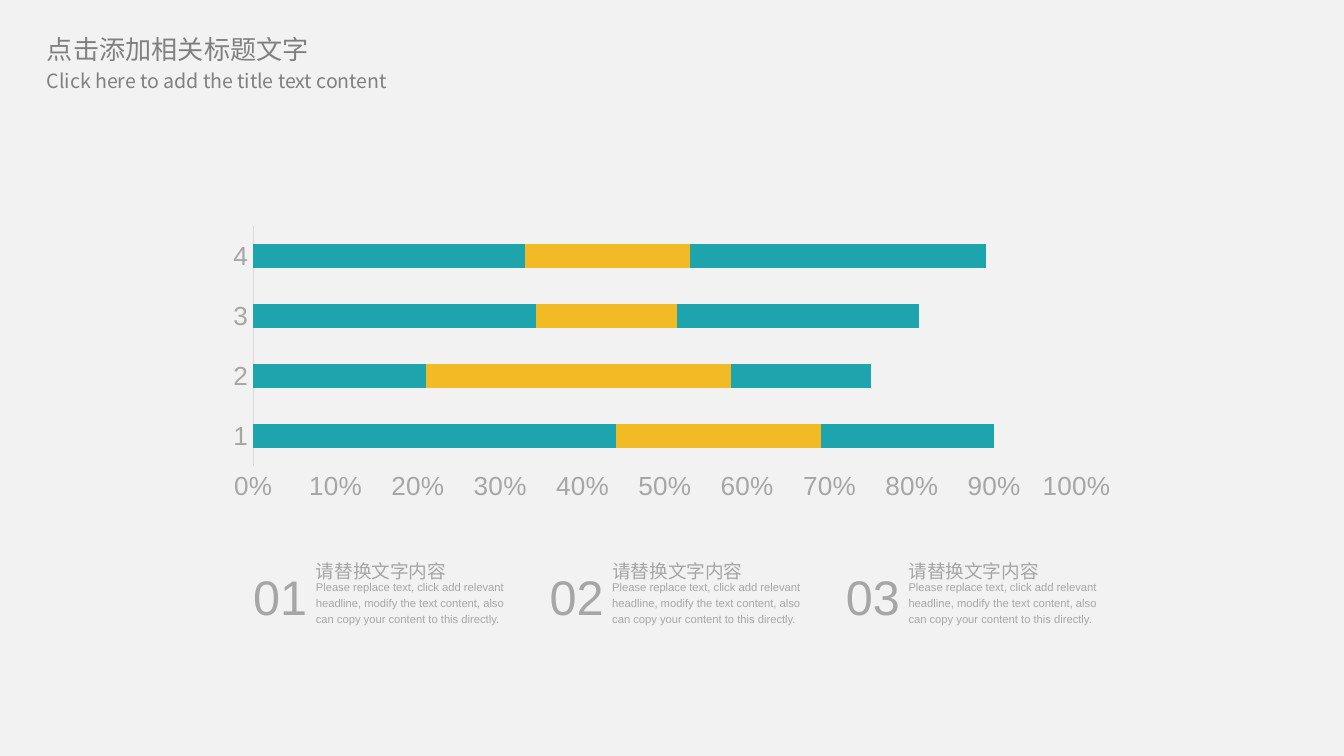
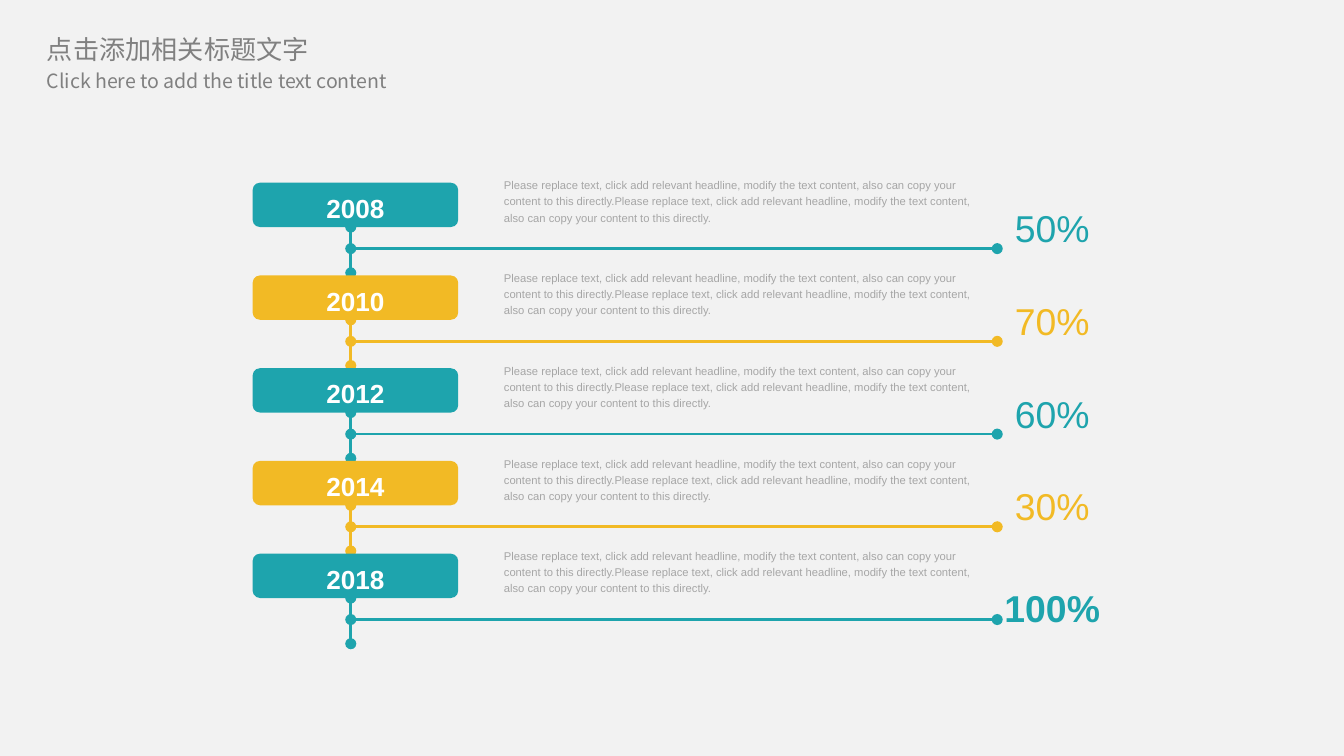
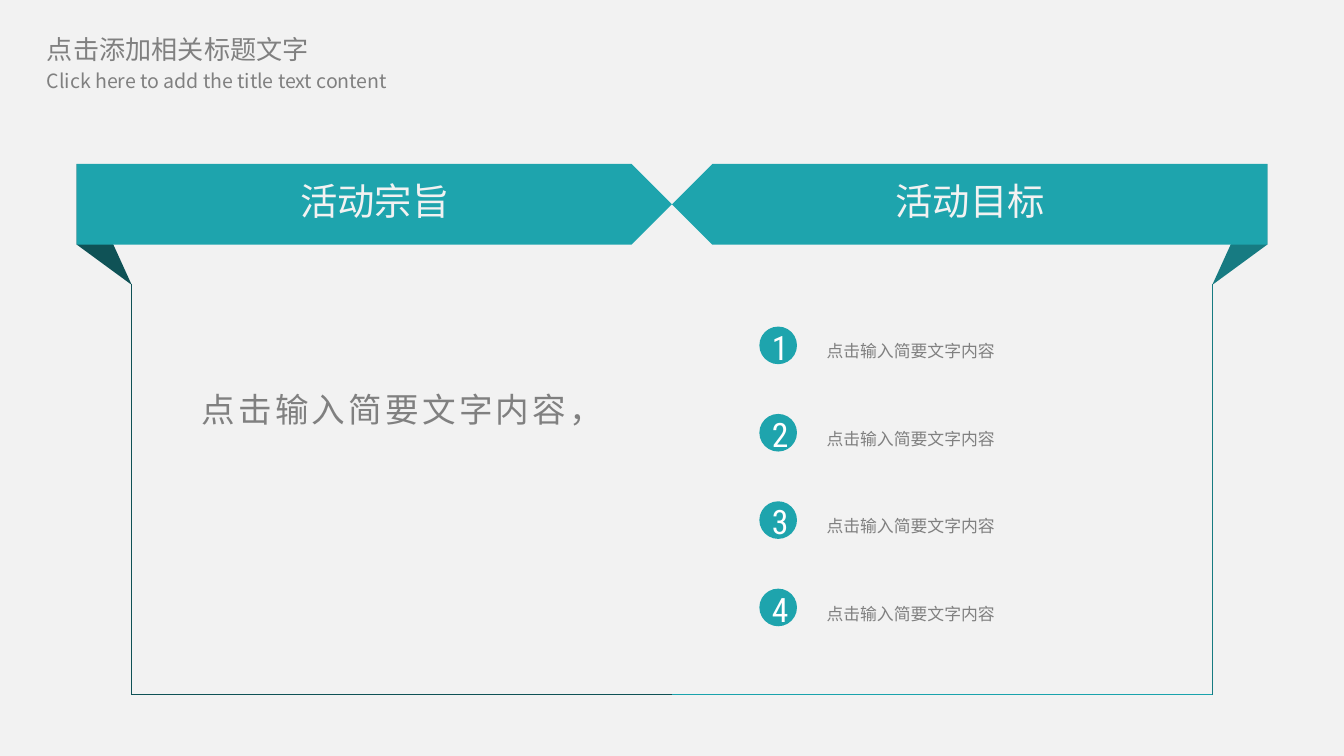
import dataclasses

import lxml.etree
import pptx
import pptx.chart.data
import pptx.dml.color
import pptx.enum.chart
import pptx.enum.shapes
import pptx.enum.text
import pptx.oxml.ns
import pptx.util

Inches = pptx.util.Inches
Pt = pptx.util.Pt
ALIGN = pptx.enum.text.PP_ALIGN
ANCHOR = pptx.enum.text.MSO_ANCHOR
SHAPE = pptx.enum.shapes.MSO_SHAPE


@dataclasses.dataclass(frozen=True)
class Theme:
    """Colours, fonts and type sizes shared by all slides."""

    background: str = "F2F2F2"
    teal: str = "1EA4AD"
    teal_rule: str = "1AA3AD"
    teal_dark: str = "177B82"
    teal_deep: str = "0F5256"
    yellow: str = "F2BA25"
    white: str = "FFFFFF"
    title_grey: str = "808080"
    body_grey: str = "A6A6A6"
    axis_grey: str = "D9D9D9"
    latin: str = "Arial"
    chinese: str = "Noto Sans CJK SC"
    numeral: str = "Roboto Condensed"
    tiny: float = 6
    small: float = 9
    caption: float = 10
    subtitle: float = 10.5
    title: float = 14
    statement: float = 18
    heading: float = 20
    index: float = 26


@dataclasses.dataclass(frozen=True)
class Box:
    """A region in inches."""

    left: float
    top: float
    width: float
    height: float

    def inner(self, left, top, width, height):
        """Return a box placed relative to this one."""
        return Box(self.left + left, self.top + top, width, height)

    def lengths(self):
        """Return left, top, width and height as lengths."""
        return [Inches(value) for value in dataclasses.astuple(self)]


THEME = Theme()
SENTENCE = ("Please replace text, click add relevant headline, modify the text content, "
            "also can copy your content to this directly.")
MILESTONES = [("2008", "50%"), ("2010", "70%"), ("2012", "60%"), ("2014", "30%"), ("2018", "100%")]


def rgb(colour):
    """Turn a hex string into a colour."""
    return pptx.dml.color.RGBColor.from_string(colour)


def write(frame, text, size, colour, font=THEME.latin, bold=False, align=ALIGN.LEFT,
          anchor=ANCHOR.TOP, spacing=None, before=0, inset=(0, 0), wrap=True):
    """Fill a text frame with one formatted paragraph."""
    frame.word_wrap = wrap
    frame.vertical_anchor = anchor
    frame.margin_left = frame.margin_right = Inches(inset[0])
    frame.margin_top = frame.margin_bottom = Inches(inset[1])
    paragraph = frame.paragraphs[0]
    paragraph.alignment = align
    paragraph.space_before = Pt(before)
    if spacing:
        paragraph.line_spacing = spacing
    run = paragraph.add_run()
    run.text = text
    run.font.size = Pt(size)
    run.font.bold = bold
    run.font.name = font
    run.font.color.rgb = rgb(colour)
    east_asian = lxml.etree.Element(pptx.oxml.ns.qn("a:ea"), typeface=THEME.chinese)
    run.font._element.find(pptx.oxml.ns.qn("a:latin")).addnext(east_asian)


def add_text(slide, box, text, **options):
    """Add a text box."""
    write(slide.shapes.add_textbox(*box.lengths()).text_frame, text, **options)


def paint(shape, colour):
    """Give a shape a flat fill without line or shadow."""
    shape.shadow.inherit = False
    shape.fill.solid()
    shape.fill.fore_color.rgb = rgb(colour)
    shape.line.fill.background()
    return shape


def add_shape(slide, kind, box, colour):
    """Add a flat preset shape."""
    return paint(slide.shapes.add_shape(kind, *box.lengths()), colour)


def add_line(slide, start, end, colour, width=0.75, dots=False):
    """Add a straight line, with round ends if wanted."""
    line = slide.shapes.add_connector(pptx.enum.shapes.MSO_CONNECTOR.STRAIGHT,
                                      *[Inches(value) for value in (*start, *end)])
    line.line.color.rgb = rgb(colour)
    line.line.width = Pt(width)
    properties = line._element.spPr
    if dots:
        outline = properties.find(pptx.oxml.ns.qn("a:ln"))
        for name in ("a:headEnd", "a:tailEnd"):
            lxml.etree.SubElement(outline, pptx.oxml.ns.qn(name), type="oval")
    lxml.etree.SubElement(properties, pptx.oxml.ns.qn("a:effectLst"))


def add_titled_slide(presentation):
    """Add a blank slide with the shared title and subtitle."""
    slide = presentation.slides.add_slide(presentation.slide_layouts[6])
    style = dict(font=THEME.chinese, colour=THEME.title_grey)
    add_text(slide, Box(0.28, 0.48, 2.83, 0.25), "Click here to add the title text content",
             size=THEME.subtitle, inset=(0.07, 0.03), **style)
    add_text(slide, Box(0.28, 0.21, 2.36, 0.31), "点击添加相关标题文字",
             size=THEME.title, inset=(0.07, 0.04), **style)
    return slide


def add_bar_chart(slide, box):
    """Add the stacked percentage bars."""
    data = pptx.chart.data.CategoryChartData()
    data.categories = ["1", "2", "3", "4"]
    rows = [(44, 21, 34, 33), (25, 37, 17, 20), (21, 17, 29, 36), (10, 25, 19, 11)]
    for number, values in enumerate(rows, 1):
        data.add_series(f"Series {number}", values)
    chart = slide.shapes.add_chart(pptx.enum.chart.XL_CHART_TYPE.BAR_STACKED_100,
                                   *box.lengths(), data).chart
    chart.has_legend = chart.has_title = False
    chart.font.name = THEME.latin
    chart.font.size = Pt(THEME.title)
    chart.font.color.rgb = rgb(THEME.body_grey)
    for axis in (chart.category_axis, chart.value_axis):
        axis.has_major_gridlines = False
        axis.major_tick_mark = axis.minor_tick_mark = pptx.enum.chart.XL_TICK_MARK.NONE
    chart.category_axis.format.line.color.rgb = rgb(THEME.axis_grey)
    chart.category_axis.format.line.width = Pt(0.75)
    chart.value_axis.format.line.fill.background()
    chart.value_axis.tick_labels.number_format = "0%"
    chart.value_axis.tick_labels.number_format_is_linked = False
    plot = chart.plots[0]
    plot.gap_width, plot.overlap, plot.vary_by_categories = 150, 100, False
    colours = (THEME.teal, THEME.yellow, THEME.teal, THEME.background)
    for series, colour in zip(plot.series, colours):
        series.format.fill.solid()
        series.format.fill.fore_color.rgb = rgb(colour)


def add_numbered_note(slide, box, number):
    """Add a large number with a heading and a note beside it."""
    style = dict(colour=THEME.body_grey, spacing=1.2)
    add_text(slide, box.inner(0, 0, 0.61, 0.63), f"{number:02}", size=THEME.index,
             align=ALIGN.CENTER, inset=(0.1, 0.05), wrap=False, **style)
    add_text(slide, box.inner(0.57, 0.22, 1.41, 0.36), SENTENCE, size=THEME.tiny, before=7.5, **style)
    add_text(slide, box.inner(0.57, 0.05, 1.32, 0.2), "请替换文字内容",
             size=THEME.caption, before=7.5, **style)


def build_chart_slide(presentation):
    """Build the chart with three notes below."""
    slide = add_titled_slide(presentation)
    add_bar_chart(slide, Box(1.6, 1.64, 6.8, 2.13))
    for column in range(3):
        add_numbered_note(slide, Box(1.78 + 4.41 / 2 * column, 4.08, 1.98, 0.63), column + 1)


def add_milestone(slide, box, year, share, colour, last):
    """Add one timeline row: year, note, lines and share."""
    label = add_shape(slide, SHAPE.ROUNDED_RECTANGLE, box.inner(0, 0, 1.53, 0.33), colour)
    write(label.text_frame, year, size=THEME.title, colour=THEME.white, bold=True, align=ALIGN.CENTER,
          anchor=ANCHOR.MIDDLE, spacing=1.2, inset=(0.07, 0.04))
    add_text(slide, box.inner(1.87, -0.05, 3.47, 0.36), SENTENCE * 2, size=THEME.tiny,
             colour=THEME.body_grey, spacing=1.2, before=0.2 * THEME.tiny)
    share_width = 0.73 if last else 0.56
    add_text(slide, box.inner(5.95 - share_width / 2, 0.13, share_width, 0.41), share,
             size=THEME.heading, colour=colour, bold=last, align=ALIGN.CENTER, anchor=ANCHOR.MIDDLE,
             spacing=1.4 if last else None, before=0.2 * THEME.heading, wrap=False)
    stem, rule = box.left + 0.73, box.top + 0.49
    add_line(slide, (stem, box.top + 0.33), (stem, box.top + 0.67), colour, width=1.5, dots=True)
    add_line(slide, (box.left + 5.54, rule), (stem, rule), colour, width=1.5, dots=True)


def build_timeline_slide(presentation):
    """Build the timeline of years in alternating colours."""
    slide = add_titled_slide(presentation)
    for row, (year, share) in enumerate(MILESTONES):
        colour = (THEME.teal, THEME.yellow)[row % 2]
        add_milestone(slide, Box(1.88, 1.36 + 0.69 * row, 6.31, 0.69), year, share, colour,
                      last=row == len(MILESTONES) - 1)


def add_ribbon_panel(slide, box, heading, colour, rule_colour, mirrored):
    """Add a folded ribbon with its heading and the frame below it."""
    edge = box.left + box.width if mirrored else box.left
    centre = box.left if mirrored else box.left + box.width
    side = edge + (-0.41 if mirrored else 0.41)
    bottom = box.top + box.height
    corners = [(edge, box.top), (side, box.top + 0.9), (edge, box.top + 0.6)]
    points = [(Inches(x), Inches(y)) for x, y in corners]
    builder = slide.shapes.build_freeform(*points[0])
    builder.add_line_segments(points[1:], close=True)
    paint(builder.convert_to_shape(), colour)
    add_line(slide, (side, box.top + 0.89), (side, bottom), colour)
    ribbon = add_shape(slide, SHAPE.PENTAGON, box.inner(0, 0, box.width, 0.6), THEME.teal)
    ribbon.rotation = 180 if mirrored else 0
    add_text(slide, box.inner(1.46, 0.06, 1.52, 0.44), heading, size=THEME.heading,
             colour=THEME.background, font=THEME.chinese, align=ALIGN.CENTER, inset=(0.1, 0.05))
    add_line(slide, (side, bottom), (centre, bottom), rule_colour)


def add_goal(slide, box, number):
    """Add a numbered disc with its goal."""
    add_shape(slide, SHAPE.OVAL, box.inner(0, 0, 0.28, 0.28), THEME.teal)
    add_text(slide, box.inner(0.04, 0, 0.23, 0.3), str(number), size=THEME.statement,
             colour=THEME.white, font=THEME.numeral, align=ALIGN.CENTER)
    add_text(slide, box.inner(0.5, 0.03, 2.61, 0.24), "点击输入简要文字内容", size=THEME.small,
             colour=THEME.title_grey, font=THEME.chinese, align=ALIGN.JUSTIFY, spacing=Pt(16.5))


def build_goals_slide(presentation):
    """Build the two ribbon panels with purpose and goals."""
    slide = add_titled_slide(presentation)
    add_ribbon_panel(slide, Box(5, 1.22, 4.43, 3.95), "活动目标", THEME.teal_dark, THEME.teal_rule, True)
    add_ribbon_panel(slide, Box(0.57, 1.22, 4.43, 3.95), "活动宗旨", THEME.teal_deep, THEME.teal_deep, False)
    add_text(slide, Box(1.5, 2.74, 2.74, 0.45), "点击输入简要文字内容，", size=THEME.statement,
             colour=THEME.title_grey, font=THEME.chinese, align=ALIGN.JUSTIFY, spacing=1.5)
    for row in range(4):
        add_goal(slide, Box(5.65, 2.43 + 0.65 * row, 3.11, 0.3), row + 1)


def main():
    """Build and save the presentation."""
    presentation = pptx.Presentation()
    presentation.slide_width = Inches(10)
    presentation.slide_height = Inches(10) * 9 // 16
    fill = presentation.slide_master.background.fill
    fill.solid()
    fill.fore_color.rgb = rgb(THEME.background)
    build_chart_slide(presentation)
    build_timeline_slide(presentation)
    build_goals_slide(presentation)
    presentation.save("out.pptx")


if __name__ == "__main__":
    main()
